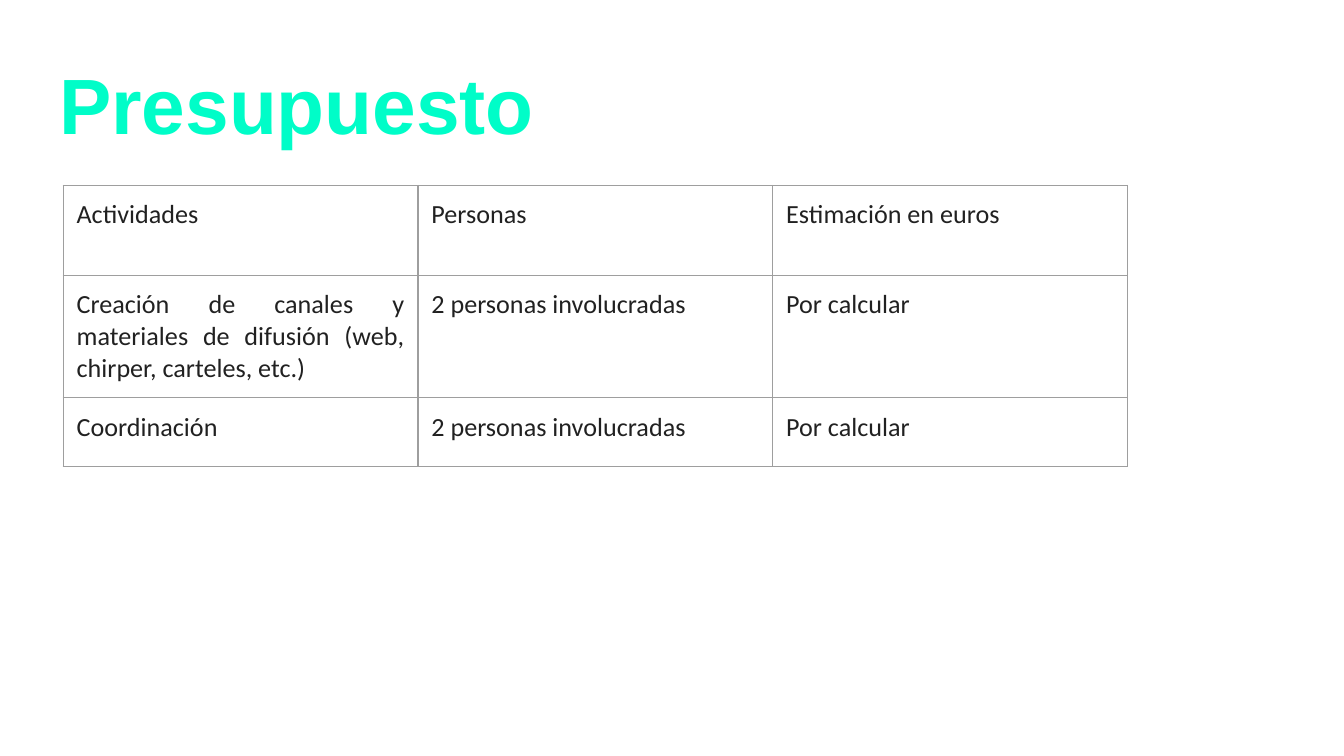
import pptx
import pptx.util
import pptx.dml.color
import pptx.enum.text
import pptx.oxml
import pptx.oxml.ns

Inches = pptx.util.Inches
Pt = pptx.util.Pt
RGBColor = pptx.dml.color.RGBColor
Align = pptx.enum.text.PP_ALIGN
Anchor = pptx.enum.text.MSO_ANCHOR

MINT = RGBColor(0x00, 0xFD, 0xC8)
INK = RGBColor(0x21, 0x21, 0x21)
GRAY = RGBColor(0x9E, 0x9E, 0x9E)

PAD = Inches(0.1)
COL_WIDTH = Inches(2.64)
ROW_HEIGHTS = [Inches(0.67), Inches(0.91), Inches(0.51)]
BUDGET = [
    ["Actividades", "Personas", "Estimación en euros"],
    ["Creación de canales y materiales de difusión (web, chirper, carteles, etc.)",
     "2 personas involucradas", "Por calcular"],
    ["Coordinación", "2 personas involucradas", "Por calcular"],
]


def add_run(para, text, font, size, color, bold=False):
    run = para.add_run()
    run.text = text
    run.font.name = font
    run.font.size = Pt(size)
    run.font.bold = bold
    run.font.color.rgb = color


def set_title(slide, text):
    title = slide.shapes.title
    title.left, title.top = Inches(0.34), Inches(0.32)
    title.width, title.height = Inches(9.32), Inches(0.88)
    frame = title.text_frame
    frame.margin_left = frame.margin_right = PAD
    frame.margin_top = frame.margin_bottom = PAD
    frame.vertical_anchor = Anchor.TOP
    para = frame.paragraphs[0]
    para.alignment = Align.LEFT
    add_run(para, text, "Arial", 42, MINT, bold=True)


def set_border(cell):
    props = cell._tc.get_or_add_tcPr()
    # Border lines come before the fill in the cell properties
    for spot, side in enumerate(("lnL", "lnR", "lnT", "lnB")):
        line = pptx.oxml.parse_xml(
            f'<a:{side} {pptx.oxml.ns.nsdecls("a")} w="{Pt(0.75)}">'
            f'<a:solidFill><a:srgbClr val="{GRAY}"/></a:solidFill></a:{side}>')
        props.insert(spot, line)


def fill_cell(cell, text, align):
    cell.margin_left = cell.margin_right = PAD
    cell.margin_top = cell.margin_bottom = PAD
    cell.fill.background()
    set_border(cell)
    para = cell.text_frame.paragraphs[0]
    para.alignment = align
    add_run(para, text, "Calibri", 14, INK)


def add_budget(slide):
    cols = len(BUDGET[0])
    table = slide.shapes.add_table(
        len(BUDGET), cols, Inches(0.47), Inches(1.38),
        COL_WIDTH * cols, sum(ROW_HEIGHTS)).table
    table.first_row = table.horz_banding = False
    for col in table.columns:
        col.width = COL_WIDTH
    for r, (height, texts) in enumerate(zip(ROW_HEIGHTS, BUDGET)):
        table.rows[r].height = height
        for c, text in enumerate(texts):
            align = Align.JUSTIFY if c == 0 else Align.LEFT
            fill_cell(table.cell(r, c), text, align)


def main():
    deck = pptx.Presentation()
    # Widescreen page, 16 to 9
    deck.slide_width = Inches(10)
    deck.slide_height = deck.slide_width * 9 // 16
    # Title-only layout
    slide = deck.slides.add_slide(deck.slide_layouts[5])
    set_title(slide, "Presupuesto")
    add_budget(slide)
    deck.save("out.pptx")


if __name__ == "__main__":
    main()
